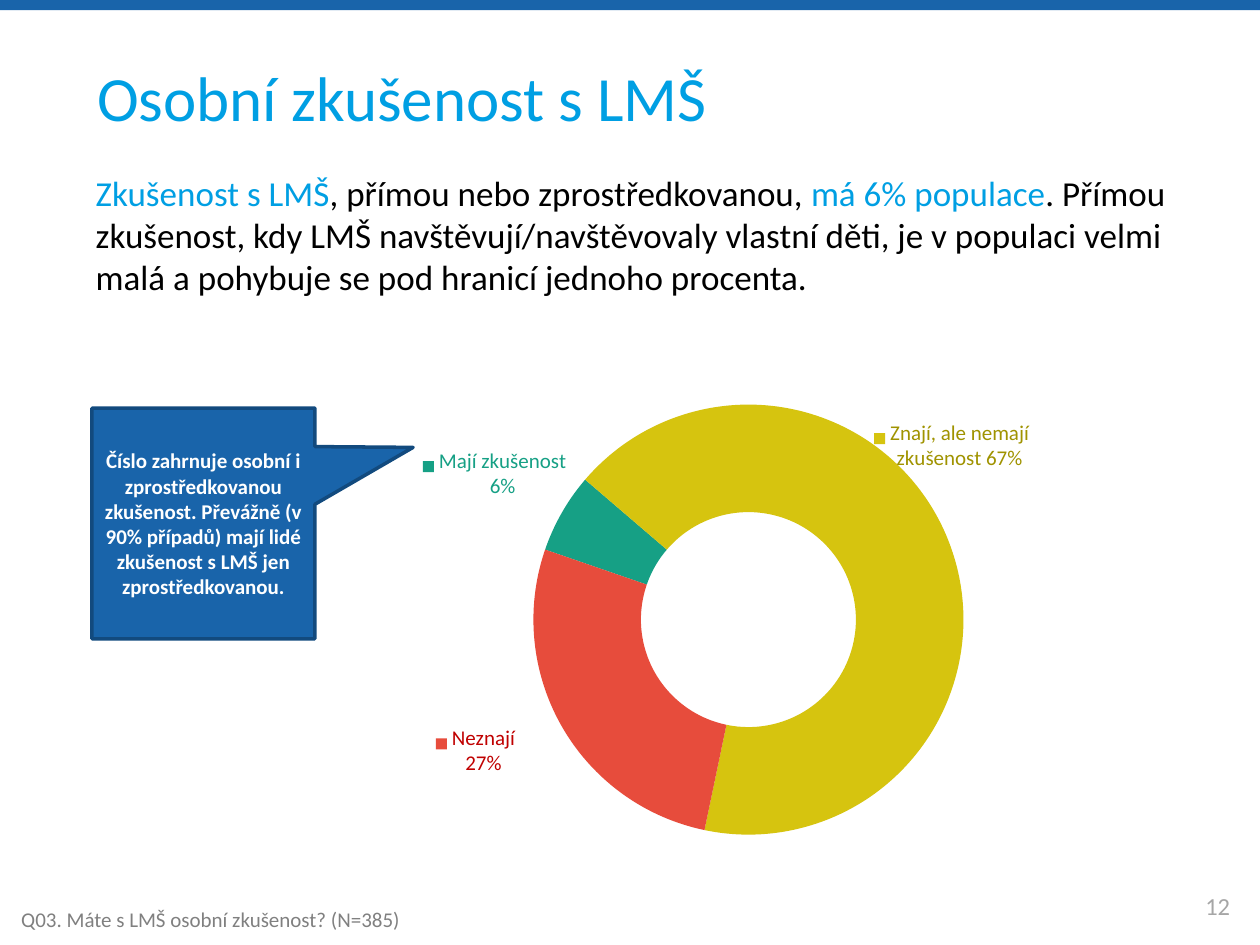
"""Build the slide on personal experience with LMŠ."""
from pptx import Presentation
from pptx.chart.data import CategoryChartData
from pptx.dml.color import RGBColor
from pptx.enum.chart import XL_CHART_TYPE as ChartType
from pptx.enum.shapes import MSO_SHAPE as Shape
from pptx.enum.text import MSO_ANCHOR as Anchor, PP_ALIGN as Align
from pptx.oxml import parse_xml
from pptx.oxml.ns import nsdecls
from pptx.util import Inches, Pt

COLORS = {
    "blue": "1964AA", "navy": "124A7E", "sky": "009FE3", "black": "000000",
    "white": "FFFFFF", "gray": "808080", "silver": "A6A6A6",
    "teal": "16A085", "yellow": "D6C40F", "red": "E74C3C",
    "olive": "A09300", "crimson": "C00000",
}

presentation = Presentation()
presentation.slide_width, presentation.slide_height = Inches(10), Inches(7.5)
slide = presentation.slides.add_slide(presentation.slide_layouts[1])
shapes = slide.shapes


def area(left, top, width, height):
    """Turn percentages of the slide into lengths."""
    column, row = presentation.slide_width / 100, presentation.slide_height / 100
    return int(left * column), int(top * row), int(width * column), int(height * row)


def add_run(paragraph, text, size, color, bold=False):
    """Add one formatted run to a paragraph."""
    run = paragraph.add_run()
    run.text = text
    run.font.name, run.font.size, run.font.bold = "Calibri", Pt(size), bold
    run.font.color.rgb = RGBColor.from_string(COLORS[color])


bar = shapes.add_shape(Shape.RECTANGLE, *area(0, 0, 100, 1.07))
bar.shadow.inherit = False
bar.fill.solid()
bar.fill.fore_color.rgb = RGBColor.from_string(COLORS["blue"])
bar.line.fill.background()

title, body = shapes.title, slide.placeholders[1]
title.left, title.top, title.width, title.height = area(6.7, 5, 86.6, 11.33)
title.text_frame.vertical_anchor = Anchor.MIDDLE
paragraph = title.text_frame.paragraphs[0]
paragraph.alignment, paragraph.line_spacing = Align.LEFT, 0.9
add_run(paragraph, "Osobní zkušenost s LMŠ", 36, "sky")

body.left, body.top, body.width, body.height = area(6.6, 17.47, 87.7, 19.33)
paragraph = body.text_frame.paragraphs[0]
properties = paragraph._p.get_or_add_pPr()
properties.set("marL", "0")
properties.set("indent", "0")
properties.append(parse_xml(f"<a:buNone {nsdecls('a')}/>"))
paragraph.space_before = Pt(0)
for text, color in (
    ("Zkušenost s LMŠ", "sky"),
    (", přímou nebo zprostředkovanou, ", "black"),
    ("má 6% populace", "sky"),
    (". Přímou zkušenost, kdy LMŠ navštěvují/navštěvovaly vlastní děti, je v populaci "
     "velmi malá a pohybuje se pod hranicí jednoho procenta.", "black"),
):
    add_run(paragraph, text, 20, color)

for text, place, size, color, alignment, anchor, wrap in (
    ("12", (93.3, 93.2, 6.7, 5.33), 14, "silver", Align.CENTER, Anchor.MIDDLE, True),
    ("Q03. Máte s LMŠ osobní zkušenost? (N=385)", (0.7, 95.33, 32.5, 4), 12, "gray",
     Align.LEFT, Anchor.TOP, False),
):
    frame = shapes.add_textbox(*area(*place)).text_frame
    frame.word_wrap, frame.vertical_anchor = wrap, anchor
    frame.paragraphs[0].alignment = alignment
    add_run(frame.paragraphs[0], text, size, color)

data = CategoryChartData(number_format="0")
data.categories = ["Mají zkušenost", "Znají, ale nemají zkušenost", "Neznají"]
data.add_series("Zkušenost s LMŠ", (6, 67, 27))
chart = shapes.add_chart(ChartType.DOUGHNUT, *area(33.3, 39.47, 50.2, 49.73), data).chart
chart.has_title = chart.has_legend = False
chart.font.name, chart.font.size = "Calibri", Pt(10.5)
chart.font.color.rgb = RGBColor.from_string(COLORS["black"])
plot = chart.plots[0]
plot.vary_by_categories = True

for index, (fill, color, lines, x, y) in enumerate((
    ("teal", "teal", ("Mají zkušenost", "6%"), -0.18, -0.14),
    ("yellow", "olive", ("Znají, ale nemají zkušenost 67%",), 0.08, -0.26),
    ("red", "crimson", ("Neznají", "27%"), -0.21, 0.11),
)):
    point = plot.series[0].points[index]
    point.format.fill.solid()
    point.format.fill.fore_color.rgb = RGBColor.from_string(COLORS[fill])
    point.format.line.fill.background()
    frame = point.data_label.text_frame
    for number, line in enumerate(lines):
        paragraph = frame.add_paragraph() if number else frame.paragraphs[0]
        add_run(paragraph, line, 12, color)
    label = chart.element.xpath(f".//c:dLbl[c:idx/@val='{index}']")[0]
    label.xpath("c:showLegendKey")[0].set("val", "1")
    label.xpath("c:idx")[0].addnext(parse_xml(
        f"<c:layout {nsdecls('c')}><c:manualLayout>"
        f'<c:x val="{x}"/><c:y val="{y}"/></c:manualLayout></c:layout>'))

for leader_lines in chart.element.xpath(".//c:showLeaderLines"):
    leader_lines.set("val", "0")
for tag, value in (("firstSliceAng", "289"), ("holeSize", "50")):
    chart.element.xpath(f".//c:doughnutChart/c:{tag}")[0].set("val", value)
plot_area = chart.element.xpath(".//c:plotArea")[0]
for layout in plot_area.xpath("c:layout"):
    plot_area.remove(layout)
plot_area.insert(0, parse_xml(
    f"<c:layout {nsdecls('c')}><c:manualLayout>"
    '<c:layoutTarget val="inner"/><c:xMode val="edge"/><c:yMode val="edge"/>'
    '<c:x val="0.18"/><c:y val="0.05"/><c:w val="0.68"/><c:h val="0.95"/>'
    "</c:manualLayout></c:layout>"))

callout = shapes.add_shape(Shape.RECTANGULAR_CALLOUT, *area(7.3, 43.2, 17.7, 24.4))
callout.adjustments[0], callout.adjustments[1] = 0.94, -0.33
callout.shadow.inherit = False
callout.fill.solid()
callout.fill.fore_color.rgb = RGBColor.from_string(COLORS["blue"])
callout.line.color.rgb = RGBColor.from_string(COLORS["navy"])
callout.line.width = Pt(2)
frame = callout.text_frame
frame.word_wrap, frame.vertical_anchor = True, Anchor.MIDDLE
frame.paragraphs[0].alignment = Align.CENTER
add_run(frame.paragraphs[0],
        "Číslo zahrnuje osobní i zprostředkovanou zkušenost. Převážně (v 90% případů) "
        "mají lidé zkušenost s LMŠ jen zprostředkovanou.", 12, "white", True)

presentation.save("out.pptx")
